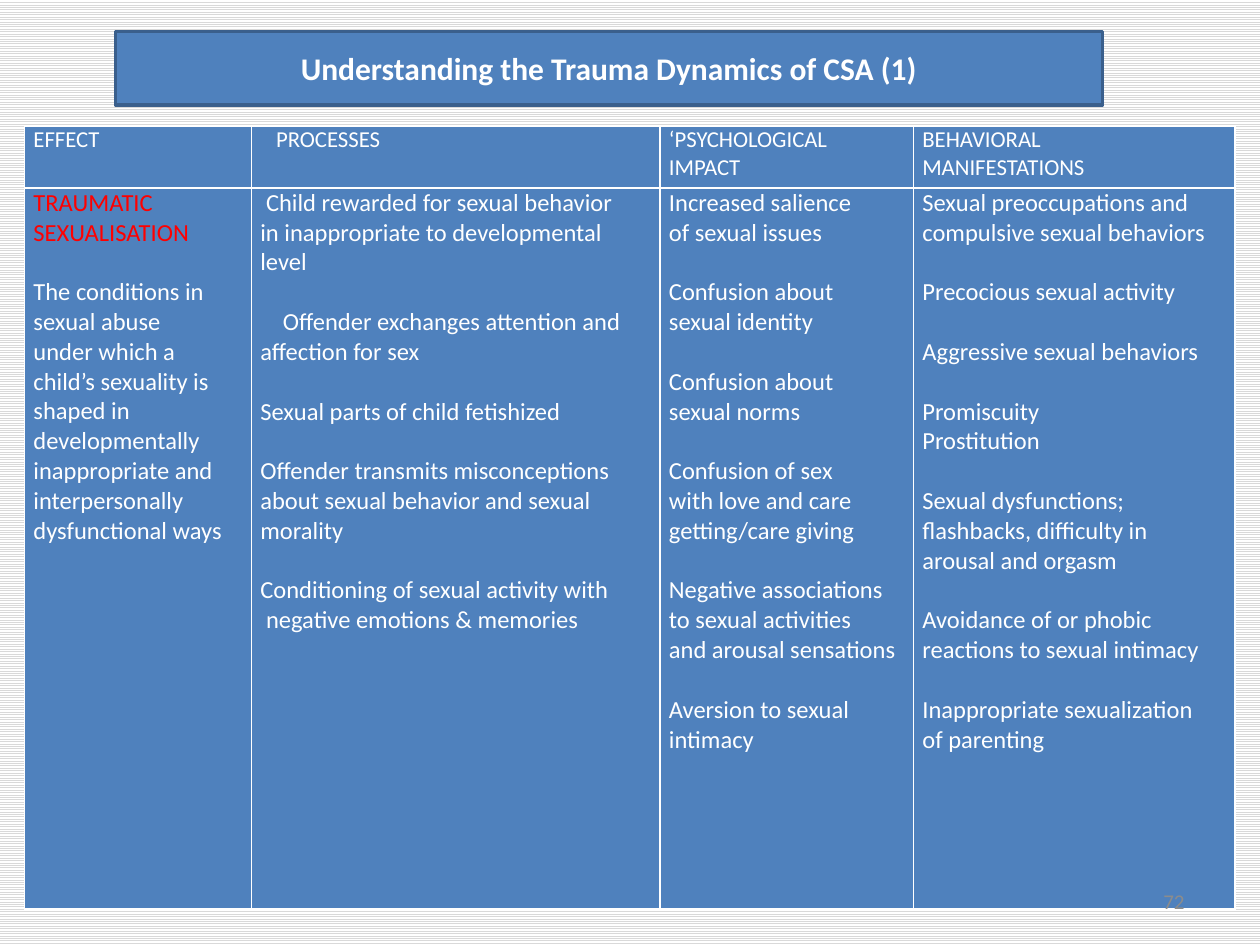
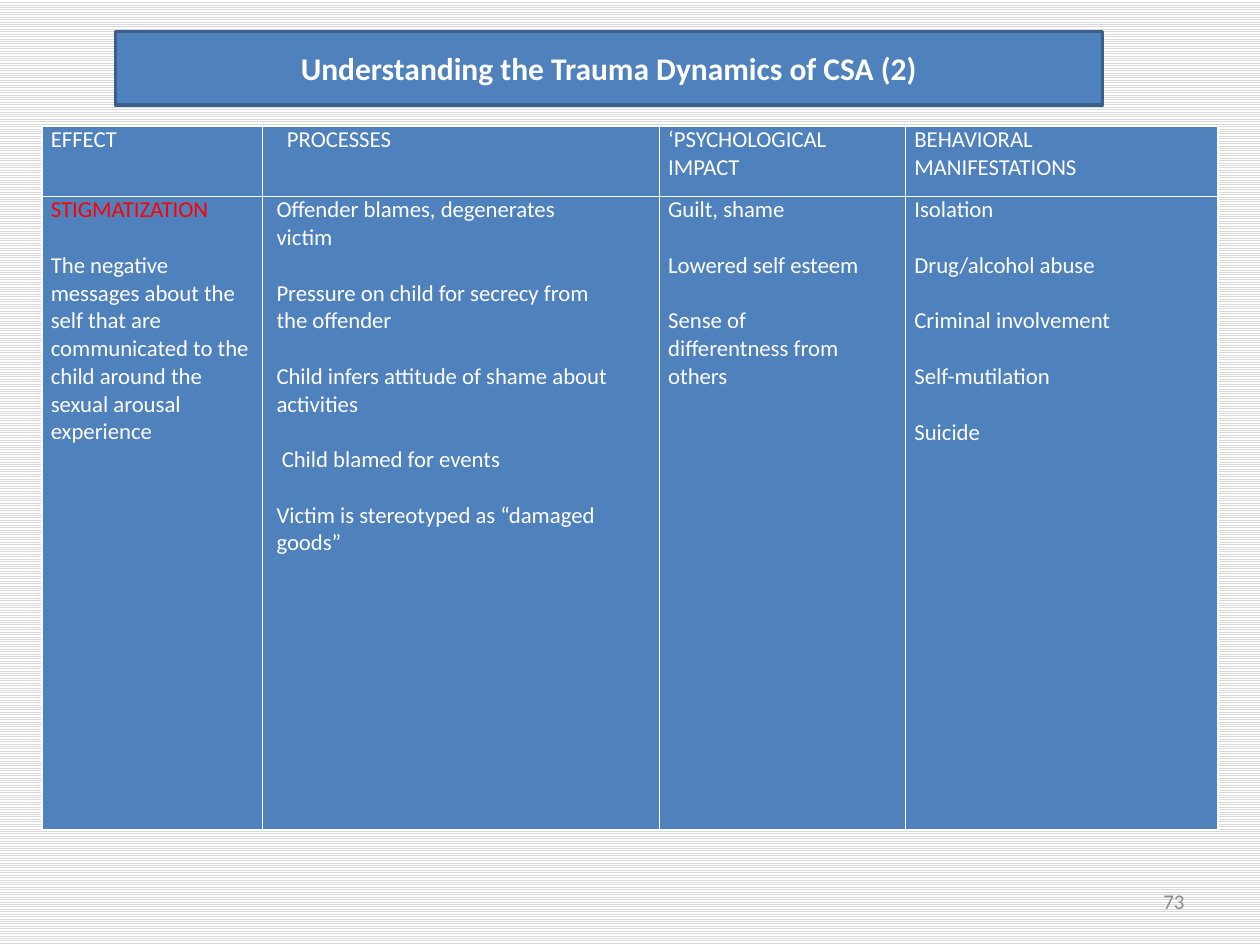
from pptx import Presentation
from pptx.dml.color import RGBColor
from pptx.enum.dml import MSO_PATTERN
from pptx.enum.text import MSO_ANCHOR, MSO_AUTO_SIZE, PP_ALIGN
from pptx.util import Inches, Pt

# Shared style
BLUE = RGBColor(0x4F, 0x81, 0xBD)
NAVY = RGBColor(0x3A, 0x5F, 0x8C)
WHITE = RGBColor(0xFF, 0xFF, 0xFF)
RED = RGBColor(0xFF, 0x00, 0x00)
STRIPE = RGBColor(0xD9, 0xD9, 0xD9)
GREY = RGBColor(0x8C, 0x8C, 0x8C)
FONT = "Calibri"
LINE_HEIGHT = 1.22     # Calibri line height, in ems
STEP_WIDTH = 0.23      # one indent step, in ems
CELL_INSET = Inches(0.07)

# Grid: 120 columns by 90 rows
COLUMNS, ROWS = 120, 90
COLUMN_WEIGHTS = (1.8, 3.24, 2.01, 2.55)
HEADER_SIZE = 13

# Content: a cell is a list of blocks set one line apart;
# each ">" at the start of a line is one indent step.
HEADINGS = (
    ["EFFECT"],
    [">>>PROCESSES"],
    ["‘PSYCHOLOGICAL\nIMPACT"],
    ["BEHAVIORAL\nMANIFESTATIONS"],
)

SEXUALISATION = (
    [
        "TRAUMATIC\nSEXUALISATION",
        "The conditions in\nsexual abuse\nunder which a\n"
        "child’s sexuality is shaped in developmentally inappropriate "
        "and interpersonally dysfunctional ways",
    ],
    [
        ">Child rewarded for sexual behavior\n"
        "in inappropriate to developmental level",
        ">>>>Offender exchanges attention and\naffection for sex",
        "Sexual parts of child fetishized",
        "Offender transmits misconceptions\n"
        "about sexual behavior and sexual\nmorality",
        "Conditioning of sexual activity with\n>negative emotions & memories",
    ],
    [
        "Increased salience\nof sexual issues",
        "Confusion about\nsexual identity",
        "Confusion about\nsexual norms",
        "Confusion of sex\nwith love and care getting/care giving",
        "Negative associations\nto sexual activities\nand arousal sensations",
        "Aversion to sexual\nintimacy",
    ],
    [
        "Sexual preoccupations and\ncompulsive sexual behaviors",
        "Precocious sexual activity",
        "Aggressive sexual behaviors",
        "Promiscuity\nProstitution",
        "Sexual dysfunctions;\nflashbacks, difficulty in\narousal and orgasm",
        "Avoidance of or phobic\nreactions to sexual intimacy",
        "Inappropriate sexualization\nof parenting",
    ],
)

STIGMATIZATION = (
    [
        "STIGMATIZATION",
        "The negative\nmessages about the self that are communicated "
        "to the child around the sexual arousal experience",
    ],
    [
        ">Offender blames, degenerates\n>victim",
        ">Pressure on child for secrecy from\n>the offender",
        ">Child infers attitude of shame about\n>activities",
        ">>Child blamed for events",
        ">Victim is stereotyped as “damaged\n>goods”",
    ],
    ["Guilt, shame", "Lowered self esteem", "Sense of\ndifferentness from\nothers"],
    [
        "Isolation",
        "Drug/alcohol abuse",
        "Criminal involvement",
        "Self-mutilation",
        "Suicide",
    ],
)


def write(frame, blocks, *, size, color=WHITE, lead_color=None, bold=False,
          align=PP_ALIGN.LEFT):
    """Fill a text frame; lead_color, if given, colours the first block."""
    frame.word_wrap = True
    paragraph = None
    for block_no, block in enumerate(blocks):
        for line_no, marked_line in enumerate(block.split("\n")):
            paragraph = frame.add_paragraph() if paragraph else frame.paragraphs[0]
            line = marked_line.lstrip(">")
            steps = len(marked_line) - len(line)
            if steps:
                margin = Pt(steps * STEP_WIDTH * size)
                paragraph._p.get_or_add_pPr().set("marL", str(int(margin)))
            paragraph.alignment = align
            if block_no and not line_no:
                paragraph.space_before = Pt(size * LINE_HEIGHT)
            run = paragraph.add_run()
            run.text = line
            run.font.name = FONT
            run.font.size = Pt(size)
            run.font.bold = bold
            lead = lead_color if block_no == 0 else None
            run.font.color.rgb = lead or color


class Deck:
    def __init__(self):
        self.prs = Presentation()
        self.prs.slide_width, self.prs.slide_height = Inches(10), Inches(7.5)
        self.slide = None
        stripes = self.prs.slide_master.background.fill
        stripes.patterned()
        stripes.pattern = MSO_PATTERN.LIGHT_HORIZONTAL
        stripes.fore_color.rgb = STRIPE
        stripes.back_color.rgb = WHITE

    def x(self, columns):
        return int(self.prs.slide_width * columns / COLUMNS)

    def y(self, rows):
        return int(self.prs.slide_height * rows / ROWS)

    def new_slide(self):
        self.slide = self.prs.slides.add_slide(self.prs.slide_layouts[5])

    def title(self, text):
        banner = self.slide.shapes.title
        banner.left, banner.top = self.x(11), self.y(3)
        banner.width, banner.height = self.x(94), self.y(7)
        banner.fill.solid()
        banner.fill.fore_color.rgb = BLUE
        banner.line.color.rgb = NAVY
        banner.line.width = Pt(2)
        banner.text_frame.auto_size = MSO_AUTO_SIZE.NONE
        banner.text_frame.vertical_anchor = MSO_ANCHOR.MIDDLE
        write(banner.text_frame, [text], size=18, bold=True, align=PP_ALIGN.CENTER)

    def effect_table(self, effect, *, width, heights, size):
        """A table centred on the slide: headings above one effect."""
        table = self.slide.shapes.add_table(
            2, len(HEADINGS), self.x((COLUMNS - width) / 2), self.y(12),
            self.x(width), self.y(sum(heights))).table
        for column, weight in zip(table.columns, COLUMN_WEIGHTS):
            column.width = self.x(width * weight / sum(COLUMN_WEIGHTS))
        for row, height in zip(table.rows, heights):
            row.height = self.y(height)
        for c, (heading, details) in enumerate(zip(HEADINGS, effect)):
            self.cell(table.cell(0, c), heading, size=HEADER_SIZE)
            self.cell(table.cell(1, c), details, size=size,
                      lead_color=RED if c == 0 else None)

    def cell(self, cell, blocks, **text_format):
        cell.fill.solid()
        cell.fill.fore_color.rgb = BLUE
        cell.margin_left = cell.margin_right = CELL_INSET
        cell.margin_top = cell.margin_bottom = 0
        write(cell.text_frame, blocks, **text_format)

    def page_number(self, number):
        footer = self.slide.shapes.add_textbox(
            self.x(86), self.y(83.4), self.x(28), self.y(4.8))
        footer.text_frame.vertical_anchor = MSO_ANCHOR.MIDDLE
        write(footer.text_frame, [str(number)], size=12, color=GREY,
              align=PP_ALIGN.RIGHT)


def main():
    deck = Deck()
    effects = (
        (SEXUALISATION, dict(width=115.3, heights=(5.9, 68.7), size=14)),
        (STIGMATIZATION, dict(width=112, heights=(6.7, 60.3), size=13)),
    )
    for part, (effect, layout) in enumerate(effects, start=1):
        deck.new_slide()
        deck.title(f"Understanding the Trauma Dynamics of CSA ({part})")
        deck.effect_table(effect, **layout)
        deck.page_number(71 + part)
    deck.prs.save("out.pptx")


if __name__ == "__main__":
    main()
